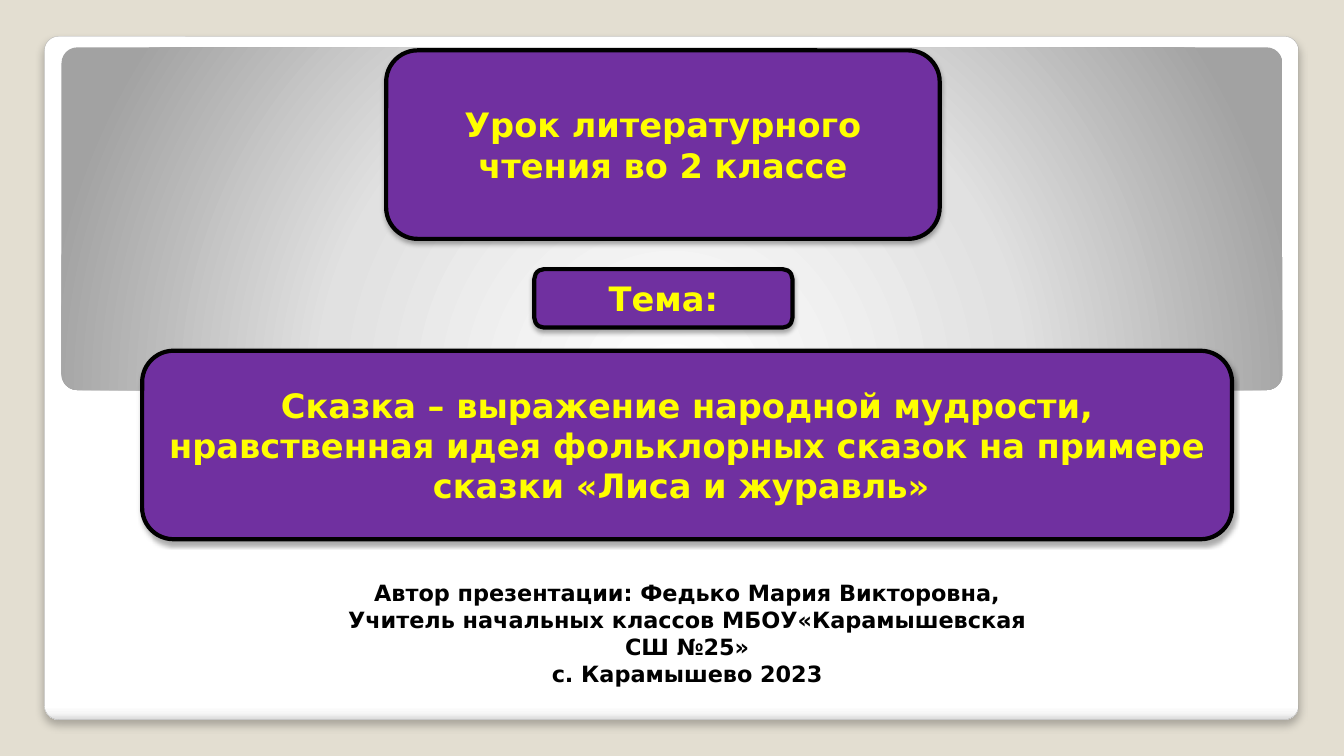
"""Builds the title slide of a literary reading lesson."""
import pptx
import pptx.dml.color
import pptx.enum.shapes
import pptx.enum.text
import pptx.oxml
import pptx.oxml.ns
import pptx.util
from pptx.util import Inches

COLORS = {
    "backdrop": "E3DED1",
    "card_edge": "A4A4A4",
    "plaque": "7030A0",
    "lettering": "FFFF00",
    "ink": "000000",
}
CARD_STOPS = [(0, "FFFFFF"), (98, "FFFFFF"), (99, "F7F7F7"), (100, "DADADA")]
PANEL_STOPS = [(0, "FFFFFF"), (55, "E1E1E1"), (100, "A2A2A2")]
DOWNWARD = '<a:lin {ns} ang="5400000" scaled="0"/>'
GLOW = ('<a:path {ns} path="circle"><a:fillToRect l="50000" t="175000" '
        'r="50000" b="-75000"/></a:path>')
FONT = "DejaVu Sans"

PLAQUES = [
    ("Урок литературного чтения во 2 классе", (3.83, 0.5, 5.49, 1.87)),
    ("Тема:", (5.3, 2.67, 2.56, 0.58)),
    ("Сказка – выражение народной мудрости, нравственная идея фольклорных "
     "сказок на примере сказки «Лиса и журавль» ", (1.41, 3.48, 10.81, 1.87)),
]
AUTHOR_LINES = [
    "Автор презентации: Федько Мария Викторовна,",
    "Учитель начальных классов МБОУ«Карамышевская ",
    "СШ №25»",
    "с. Карамышево 2023",
]


def rgb(name):
    """Return the named colour."""
    return pptx.dml.color.RGBColor.from_string(COLORS[name])


def element(template):
    """Parse a DrawingML fragment."""
    return pptx.oxml.parse_xml(template.format(ns=pptx.oxml.ns.nsdecls("a")))


def add_rounded(slide, box, corner=None):
    """Add a rounded rectangle without a shadow."""
    rounded = slide.shapes.add_shape(
        pptx.enum.shapes.MSO_SHAPE.ROUNDED_RECTANGLE, *map(Inches, box))
    rounded.shadow.inherit = False
    if corner is not None:
        rounded.adjustments[0] = corner
    return rounded


def set_outline(shape, color, width):
    """Give a shape a solid outline."""
    shape.line.color.rgb = rgb(color)
    shape.line.width = pptx.util.Pt(width)


def set_gradient(shape, stops, direction):
    """Fill a shape with gradient stops running in a direction."""
    shape.fill.gradient()
    gradient = shape.element.spPr.find(pptx.oxml.ns.qn("a:gradFill"))
    for child in list(gradient):
        gradient.remove(child)
    marks = "".join(
        f'<a:gs pos="{position * 1000}"><a:srgbClr val="{color}"/></a:gs>'
        for position, color in stops)
    gradient.append(element("<a:gsLst {ns}>" + marks + "</a:gsLst>"))
    gradient.append(element(direction))


def set_shadow(shape, opacity, blur, distance):
    """Drop a black shadow straight below a shape."""
    effects = shape.element.spPr.find(pptx.oxml.ns.qn("a:effectLst"))
    effects.append(element(
        f'<a:outerShdw {{ns}} blurRad="{pptx.util.Pt(blur)}" '
        f'dist="{pptx.util.Pt(distance)}" dir="5400000" algn="t" '
        f'rotWithShape="0"><a:srgbClr val="{COLORS["ink"]}">'
        f'<a:alpha val="{opacity * 1000}"/></a:srgbClr></a:outerShdw>'))


def add_line(paragraph, words, size, color):
    """Write one centred bold run into a paragraph."""
    paragraph.alignment = pptx.enum.text.PP_ALIGN.CENTER
    run = paragraph.add_run()
    run.text = words
    run.font.name = FONT
    run.font.size = pptx.util.Pt(size)
    run.font.bold = True
    run.font.color.rgb = rgb(color)
    return run


def add_plaque(slide, words, box):
    """Add a purple plaque with outlined yellow lettering."""
    plaque = add_rounded(slide, box)
    plaque.fill.solid()
    plaque.fill.fore_color.rgb = rgb("plaque")
    set_outline(plaque, "ink", 3)
    set_shadow(plaque, 32, 3.5, 2.2)
    frame = plaque.text_frame
    frame.word_wrap = True
    frame.vertical_anchor = pptx.enum.text.MSO_ANCHOR.MIDDLE
    run = add_line(frame.paragraphs[0], words, 24, "lettering")
    run.font._element.insert(0, element(
        f'<a:ln {{ns}} w="{pptx.util.Pt(0.75)}"><a:solidFill>'
        f'<a:srgbClr val="{COLORS["ink"]}"/></a:solidFill></a:ln>'))


def add_backdrop(slide):
    """Add the white card and the grey panel at its top."""
    slide.background.fill.solid()
    slide.background.fill.fore_color.rgb = rgb("backdrop")
    card = add_rounded(slide, (0.44, 0.36, 12.44, 6.78), 0.021)
    set_gradient(card, CARD_STOPS, DOWNWARD)
    set_outline(card, "card_edge", 0.16)
    set_shadow(card, 25, 6, 4)
    panel = add_rounded(slide, (0.61, 0.47, 12.11, 3.4), 0.046)
    set_gradient(panel, PANEL_STOPS, GLOW)
    panel.line.fill.background()


def add_author(slide):
    """Add the centred author lines."""
    author = slide.shapes.add_textbox(
        *map(Inches, (3.34, 5.7, 6.95, 1.18))).text_frame
    author.word_wrap = True
    author.auto_size = pptx.enum.text.MSO_AUTO_SIZE.SHAPE_TO_FIT_TEXT
    for index, words in enumerate(AUTHOR_LINES):
        paragraph = author.add_paragraph() if index else author.paragraphs[0]
        add_line(paragraph, words, 16, "ink")


def main():
    """Build and save the slide."""
    lesson = pptx.Presentation()
    lesson.slide_width = Inches(13.33)
    lesson.slide_height = Inches(7.5)
    slide = lesson.slides.add_slide(lesson.slide_layouts[6])
    add_backdrop(slide)
    add_author(slide)
    for words, box in PLAQUES:
        add_plaque(slide, words, box)
    lesson.save("out.pptx")


if __name__ == "__main__":
    main()
